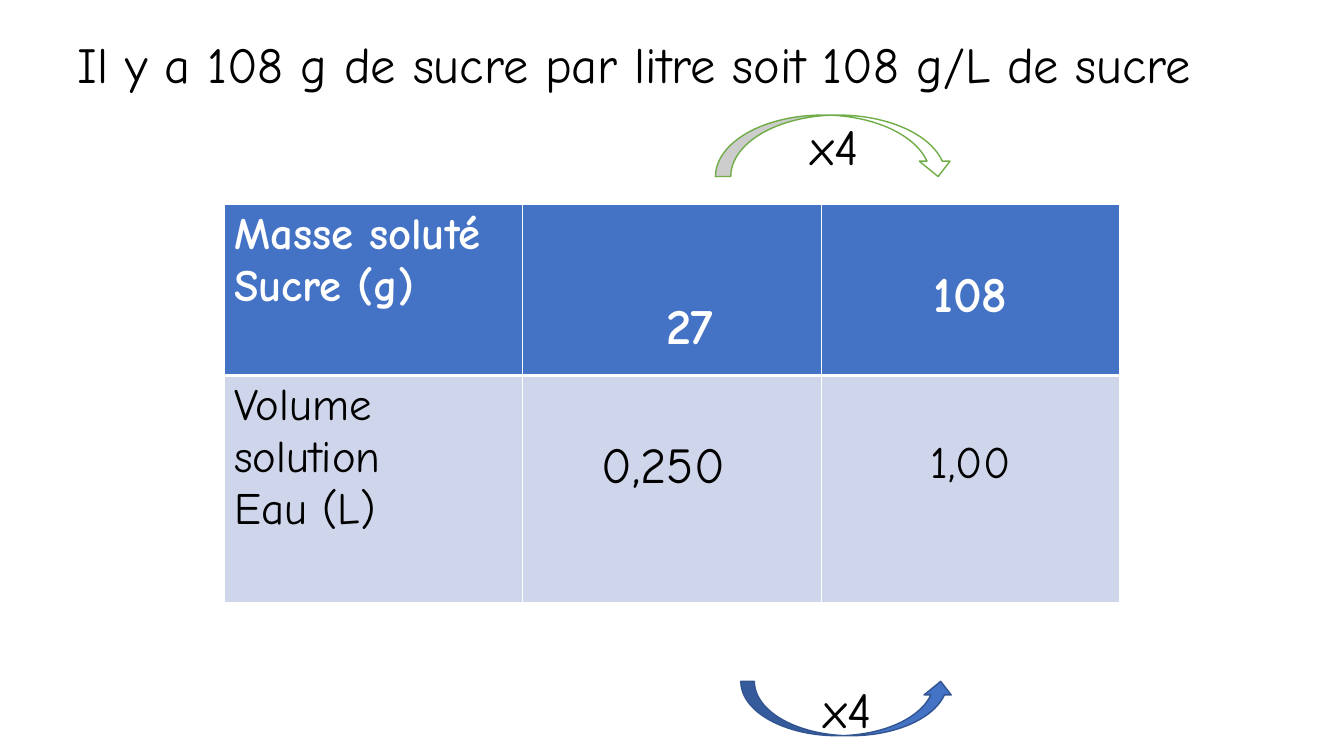
from lxml.etree import SubElement
from pptx import Presentation
from pptx.dml.color import RGBColor
from pptx.enum.shapes import MSO_SHAPE as Shape
from pptx.enum.text import MSO_ANCHOR as Anchor, MSO_AUTO_SIZE as AutoSize, PP_ALIGN as Align
from pptx.oxml.ns import qn
from pptx.util import Cm, Pt

COLOURS = {
    "white": "FFFFFF", "black": "000000", "blue": "4472C4",
    "navy": "325491", "pale": "CFD5EA", "green": "70AD47",
}
FONT = "Comic Neue"
LABEL = {"align": Align.LEFT, "size": 32, "margins": {}}
HEADER_ROW = [
    (["Masse soluté", "Sucre (g)"], LABEL),
    (["27"], {"align": Align.CENTER, "size": 36,
              "margins": {"margin_top": 2.4, "margin_left": 1.15}}),
    (["108"], {"align": Align.CENTER, "size": 36, "margins": {"margin_top": 1.59}}),
]
BODY_ROW = [
    (["Volume solution", "Eau (L)"], LABEL),
    (["0,250"], {"align": Align.CENTER, "size": 36,
                 "margins": {"margin_top": 1.59, "margin_right": 0.7}}),
    (["1,00"], {"align": Align.CENTER, "size": 32, "margins": {"margin_top": 1.59}}),
]


def colour(name):
    return RGBColor.from_string(COLOURS[name])


def write(frame, lines, align, size, ink="black", bold=False):
    frame.word_wrap = True
    for index, line in enumerate(lines):
        para = frame.add_paragraph() if index else frame.paragraphs[0]
        para.alignment = align
        span = para.add_run()
        span.text = line
        formats = {"name": FONT, "size": Pt(size), "bold": bold}
        for name, value in formats.items():
            setattr(span.font, name, value)
        span.font.color.rgb = colour(ink)


def add_title(page, left, top, width, height):
    title = page.shapes.title
    places = {"left": left, "top": top, "width": width, "height": height}
    for name, value in places.items():
        setattr(title, name, Cm(value))
    frame = title.text_frame
    frame.auto_size = AutoSize.NONE
    frame.vertical_anchor = Anchor.TOP
    write(frame, ["Il y a 108 g de sucre par litre soit 108 g/L de sucre"],
          Align.LEFT, 36)


def add_borders(cell, widths):
    properties = cell._tc.get_or_add_tcPr()
    for index, (side, width) in enumerate(widths.items()):
        line = SubElement(properties, qn(f"a:ln{side}"), w=str(Pt(width)))
        fill = SubElement(line, qn("a:solidFill"))
        SubElement(fill, qn("a:srgbClr"), val=COLOURS["white"])
        properties.insert(index, line)


def add_concentration_table(page, left, top, width, height):
    table = page.shapes.add_table(2, 3, Cm(left), Cm(top), Cm(width), Cm(height)).table
    for column in table.columns:
        column.width = Cm(width / 3)
    for row, share in zip(table.rows, (0.43, 0.57)):
        row.height = Cm(height * share)
    styles = [
        (HEADER_ROW, "blue", "white", True, {"L": 1, "R": 1, "T": 1, "B": 3}),
        (BODY_ROW, "pale", "black", False, {"L": 1, "R": 1, "T": 3, "B": 1}),
    ]
    for row, (entries, fill, ink, bold, borders) in enumerate(styles):
        for column, (lines, formats) in enumerate(entries):
            cell = table.cell(row, column)
            cell.fill.solid()
            cell.fill.fore_color.rgb = colour(fill)
            add_borders(cell, borders)
            for name, value in formats["margins"].items():
                setattr(cell, name, Cm(value))
            write(cell.text_frame, lines, formats["align"], formats["size"], ink, bold)


def add_factor_arrow(page, kind, fill, line, left, top, width, height):
    arrow = page.shapes.add_shape(kind, Cm(left), Cm(top), Cm(width), Cm(height))
    arrow.shadow.inherit = False
    arrow.fill.solid()
    arrow.fill.fore_color.rgb = colour(fill)
    arrow.line.color.rgb = colour(line)
    arrow.line.width = Pt(1)
    arrow.text_frame.vertical_anchor = Anchor.MIDDLE
    write(arrow.text_frame, ["x4"], Align.CENTER, 36)


def main():
    deck = Presentation()
    deck.slide_width, deck.slide_height = Cm(33.87), Cm(19.05)
    page = deck.slides.add_slide(deck.slide_layouts[5])
    add_concentration_table(page, 5.65, 5.15, 22.57, 10.03)
    add_title(page, 1.7, 0.71, 31.29, 1.8)
    add_factor_arrow(page, Shape.CURVED_DOWN_ARROW, "white", "green", 18.03, 2.9, 6, 1.55)
    add_factor_arrow(page, Shape.CURVED_UP_ARROW, "blue", "navy", 18.67, 17.17, 5.38, 1.37)
    deck.save("out.pptx")


if __name__ == "__main__":
    main()
